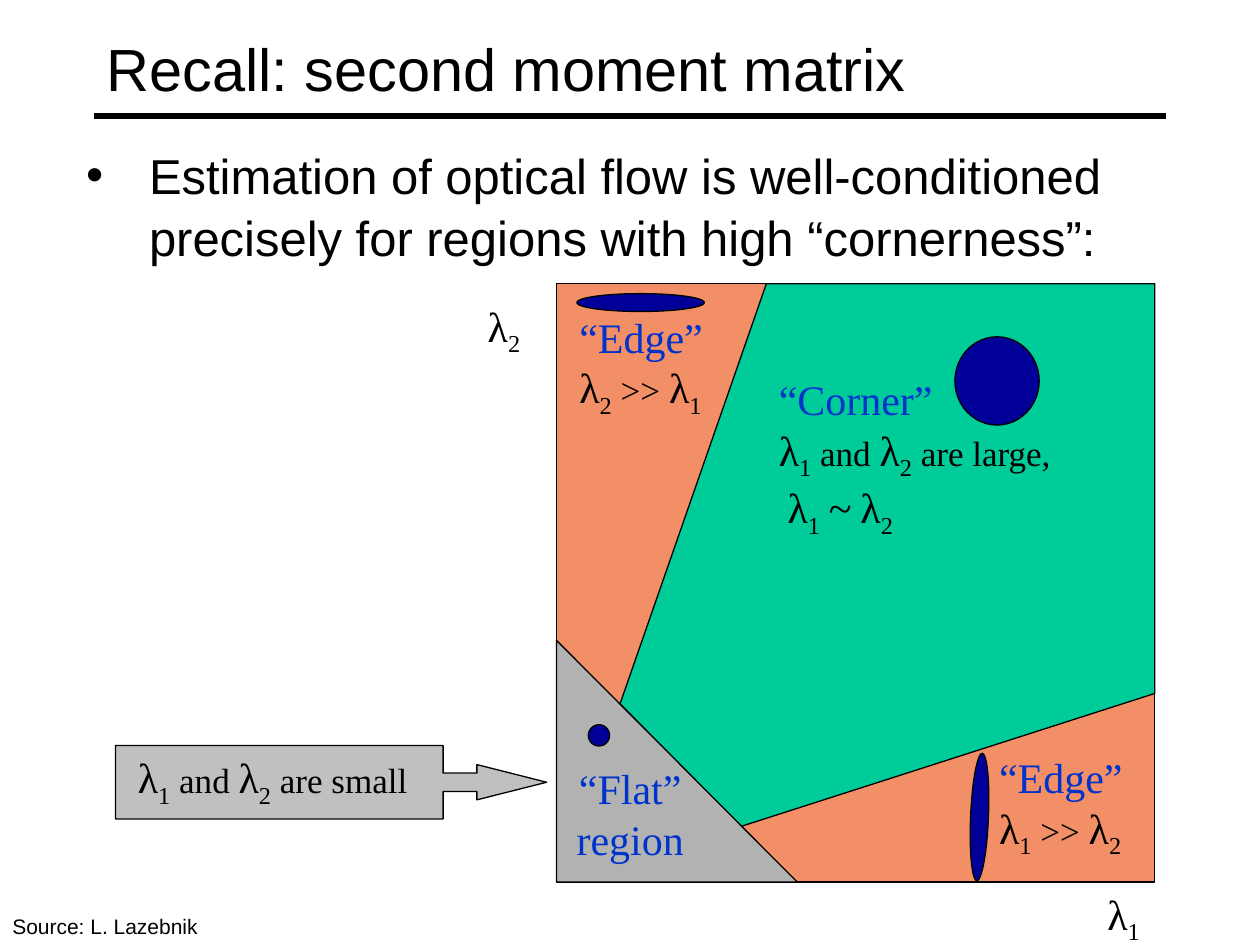
from itertools import groupby

from lxml.etree import SubElement
from pptx import Presentation
from pptx.dml.color import RGBColor
from pptx.enum.shapes import MSO_CONNECTOR as Connector, MSO_SHAPE as Shape
from pptx.enum.text import MSO_ANCHOR as Anchor, MSO_AUTO_SIZE as AutoSize, PP_ALIGN as Align
from pptx.oxml.ns import qn
from pptx.util import Cm, Pt

SANS, SERIF = "Arial", "Times New Roman"
BLACK, HEADING, ELLIPSE = "000000", "0033CC", "000099"
EDGE, CORNER, FLAT, CALLOUT = "F38F67", "00CC99", "B2B2B2", "C0C0C0"


def color(hex_code):
    """Turn a hex string into a colour."""
    return RGBColor.from_string(hex_code)


def style_run(run, size, font=SANS, ink=BLACK):
    """Set the font of one run."""
    run.font.size, run.font.name = Pt(size), font
    run.font.color.rgb = color(ink)


def place(part, box):
    """Move a part to a box given in centimetres."""
    part.left, part.top, part.width, part.height = map(Cm, box)


def paint(part, fill):
    """Give a shape a flat fill and a thin black outline."""
    part.shadow.inherit = False
    part.fill.solid()
    part.fill.fore_color.rgb = color(fill)
    part.line.color.rgb = color(BLACK)
    part.line.width = Pt(0.75)


def add_preset(slide, kind, box, fill):
    """Add a painted preset shape."""
    part = slide.shapes.add_shape(kind, *map(Cm, box))
    paint(part, fill)
    return part


def add_text_frame(slide, box, align=Align.LEFT):
    """Add a wrapping text box and return its frame."""
    frame = slide.shapes.add_textbox(*map(Cm, box)).text_frame
    frame.word_wrap = True
    frame.paragraphs[0].alignment = align
    return frame


def token_kind(char):
    """Sort a character into symbol, subscript or plain."""
    return "symbol" if char in "λ~" else "subscript" if char.isdigit() else "plain"


def add_label(slide, box, heading="", formulas=(), align=Align.LEFT):
    """Add a blue heading followed by lines of eigenvalue formulas."""
    paragraph = add_text_frame(slide, box, align).paragraphs[0]
    if heading:
        paragraph.text = heading
        style_run(paragraph.runs[0], 24, SERIF, HEADING)
    for number, formula in enumerate(formulas):
        if heading or number:
            paragraph.add_line_break()
        for kind, chars in groupby(formula, token_kind):
            run = paragraph.add_run()
            run.text = "".join(chars)
            style_run(run, 20 if kind == "plain" else 24, SERIF)
            if kind == "subscript":
                run.font._element.set("baseline", "-25000")


def add_title(slide, box):
    """Fill the title placeholder and rule a line below it."""
    left, top, width, height = box
    title = slide.shapes.title
    place(title, box)
    frame = title.text_frame
    frame.text = "Recall: second moment matrix"
    frame.vertical_anchor, frame.auto_size = Anchor.MIDDLE, AutoSize.NONE
    frame.paragraphs[0].alignment = Align.LEFT
    style_run(frame.paragraphs[0].runs[0], 34)

    base = top + height - 0.2
    rule = slide.shapes.add_connector(
        Connector.STRAIGHT, Cm(left), Cm(base), Cm(left + width), Cm(base))
    rule.line.color.rgb, rule.line.width = color(BLACK), Pt(3)
    SubElement(rule._element.spPr, qn("a:effectLst"))


def add_statement(slide, box):
    """Fill the body placeholder with the bulleted statement."""
    body = slide.placeholders[1]
    place(body, box)
    frame = body.text_frame
    frame.text = ("Estimation of optical flow is well-conditioned precisely "
                  "for regions with high “cornerness”:")
    frame.auto_size = AutoSize.NONE
    paragraph = frame.paragraphs[0]
    paragraph.space_before, paragraph.line_spacing = Pt(2), 1.05
    properties = paragraph._p.get_or_add_pPr()
    properties.set("marL", str(Cm(1.27)))
    properties.set("indent", str(-Cm(1.27)))
    SubElement(properties, qn("a:buChar")).set("char", "•")
    style_run(paragraph.runs[0], 28)


def add_region_map(slide, box):
    """Draw the eigenvalue plane with its edge, corner and flat regions."""
    left, top, width, height = box

    def inside(x, y, *size):
        return left + x, top + y, *size

    add_preset(slide, Shape.RECTANGLE, box, EDGE)
    outline = [inside(*point) for point in (
        (1.28, 8.47), (4.23, 0), (width, 0), (width, 8.26), (3.72, 10.94))]
    start, *others = [(Cm(x), Cm(y)) for x, y in outline]
    builder = slide.shapes.build_freeform(*start)
    builder.add_line_segments(others, close=True)
    paint(builder.convert_to_shape(), CORNER)
    add_preset(slide, Shape.RIGHT_TRIANGLE, inside(0, height - 4.87, 4.85, 4.87), FLAT)

    for spot, angle in (((8.03, 1.07, 1.7, 1.78), 0), ((0.41, 0.2, 2.57, 0.36), 0),
                        ((0.64, 8.89, 0.43, 0.43), 0), ((7.24, 10.57, 2.57, 0.36), 92.4)):
        add_preset(slide, Shape.OVAL, inside(*spot), ELLIPSE).rotation = angle

    for spot, heading, formulas, align in (
            ((4.23, 1.69, 7.41, 3.3), "“Corner”",
             ("λ1 and λ2 are large,", " λ1 ~ λ2"), Align.LEFT),
            ((0.21, 0.43, 3.6, 2.29), "“Edge”", ("λ2 >> λ1",), Align.LEFT),
            ((8.67, 9.31, 3.6, 2.29), "“Edge”", ("λ1 >> λ2",), Align.LEFT),
            ((-0.21, 9.53, 3.39, 2.29), "“Flat” region", (), Align.CENTER),
            ((10.37, height, 2.12, 1.27), "", ("λ1",), Align.CENTER),
            ((-2.54, 0.21, 2.96, 1.27), "", ("λ2",), Align.CENTER)):
        add_label(slide, inside(*spot), heading, formulas, align)


def add_flat_callout(slide, box):
    """Add the arrow callout that explains the flat region."""
    left, top, width, height = box
    callout = add_preset(slide, Shape.RIGHT_ARROW_CALLOUT, box, CALLOUT)
    for index, value in enumerate((0.25, 0.24, 0.95, 0.76)):
        callout.adjustments[index] = value
    add_label(slide, (left + 0.2, top, 6.55, 1.27), formulas=("λ1 and λ2 are small",))


def add_source(slide, box):
    """Add the source line."""
    frame = add_text_frame(slide, box)
    frame.text = "Source: L. Lazebnik"
    style_run(frame.paragraphs[0].runs[0], 12)


def main():
    """Build and save the slide."""
    deck = Presentation()
    deck.slide_width, deck.slide_height = Cm(25.4), Cm(19.05)
    slide = deck.slides.add_slide(deck.slide_layouts[1])
    add_title(slide, (1.9, 0.2, 21.6, 2.34))
    add_statement(slide, (1.48, 2.75, 22.23, 2.64))
    add_flat_callout(slide, (2.33, 15.03, 8.69, 1.48))
    add_region_map(slide, (11.22, 5.72, 12.06, 12.06))
    add_source(slide, (0, 18.29, 4.9, 0.76))
    deck.save("out.pptx")


if __name__ == "__main__":
    main()
